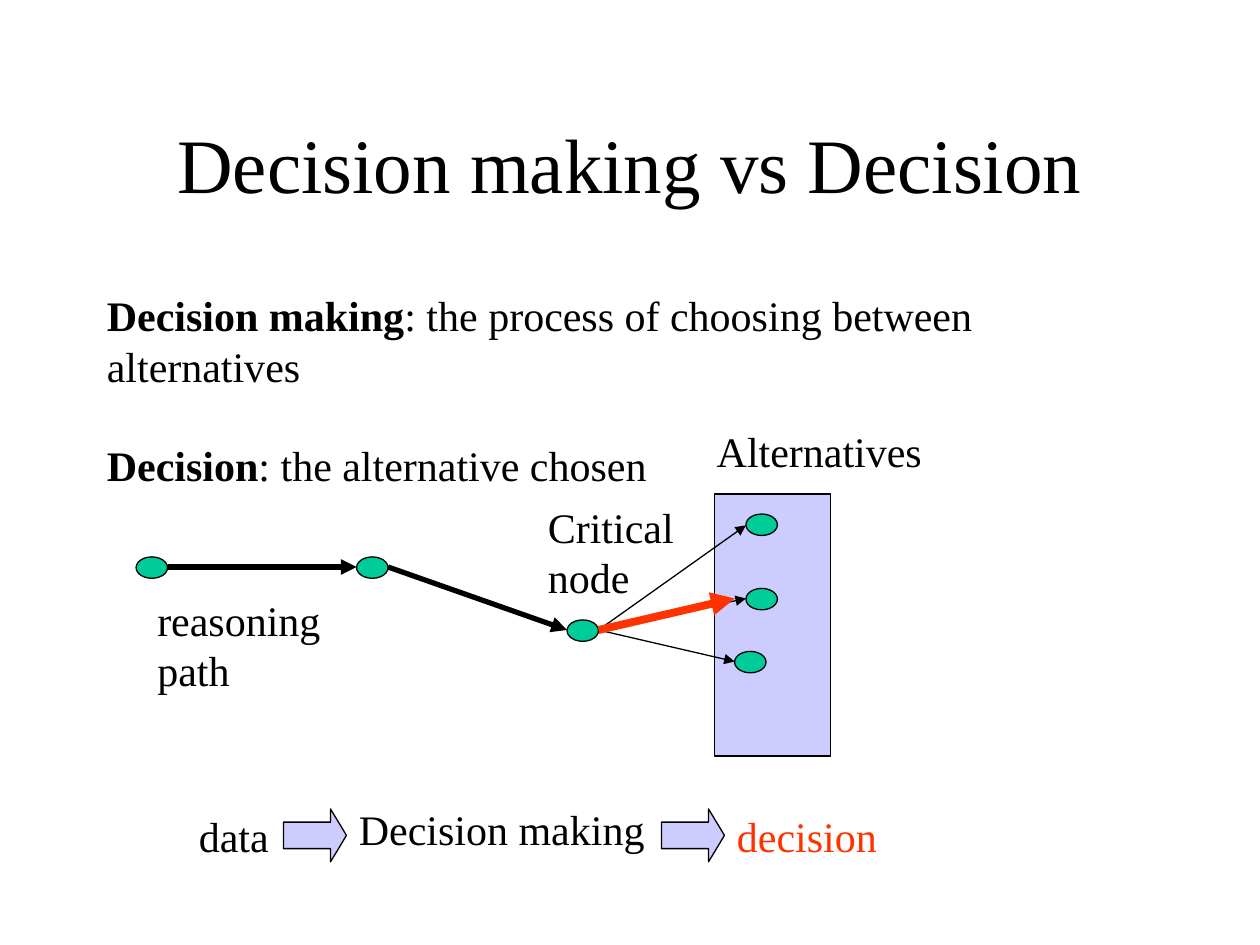
import pptx
import pptx.util
import pptx.dml.color
import pptx.enum.shapes
import pptx.enum.text
import pptx.oxml
import pptx.oxml.ns

Inches = pptx.util.Inches
Pt = pptx.util.Pt
SHAPE = pptx.enum.shapes.MSO_SHAPE
FONT, BLACK, RED, GREEN, LILAC = "Times New Roman", "000000", "FF3300", "00CC99", "CCCCFF"


def color(code):
    return pptx.dml.color.RGBColor.from_string(code)


def style(para, size=24, code=BLACK):
    for run in para.runs:
        run.font.name = FONT
        run.font.size = Pt(size)
        run.font.color.rgb = color(code)


deck = pptx.Presentation()
deck.slide_width, deck.slide_height = Inches(10), Inches(7.5)
slide = deck.slides.add_slide(deck.slide_layouts[5])
shapes = slide.shapes

# Title
title = shapes.title
title.left, title.top = Inches(0.75), Inches(0.67)
title.width, title.height = Inches(8.5), Inches(1.25)
title.text_frame.text = "Decision making vs Decision"
title.text_frame.vertical_anchor = pptx.enum.text.MSO_ANCHOR.MIDDLE
title.text_frame.paragraphs[0].alignment = pptx.enum.text.PP_ALIGN.CENTER
style(title.text_frame.paragraphs[0], 44)

# Definitions
box = shapes.add_textbox(Inches(0.75), Inches(2.25), Inches(8), Inches(1.7))
frame = box.text_frame
frame.word_wrap = True
terms = [
    ("Decision making", ": the process of choosing between alternatives"),
    ("Decision", ": the alternative chosen"),
]
for i, (term, rest) in enumerate(terms):
    para = frame.add_paragraph() if i else frame.paragraphs[0]
    para.space_before = Pt(28 * i)
    para.add_run().text = term
    para.add_run().text = rest
    para.runs[0].font.bold = True
    style(para)

# Panel, nodes and block arrows
solids = [(SHAPE.RECTANGLE, 5.67, 3.92, 0.92, 2.08, LILAC)]
nodes = [(1.08, 4.42), (2.83, 4.42), (4.5, 4.92), (5.92, 4.08), (5.92, 4.67), (5.83, 5.17)]
solids += [(SHAPE.OVAL, x, y, 0.25, 0.17, GREEN) for x, y in nodes]
solids += [(SHAPE.RIGHT_ARROW, x, 6.42, 0.5, 0.42, LILAC) for x in (2.25, 5.25)]
for kind, x, y, w, h, fill in solids:
    solid = shapes.add_shape(kind, Inches(x), Inches(y), Inches(w), Inches(h))
    solid.shadow.inherit = False
    solid.fill.solid()
    solid.fill.fore_color.rgb = color(fill)
    solid.line.color.rgb = color(BLACK)
    solid.line.width = Pt(0.75)
    if kind == SHAPE.RIGHT_ARROW:
        solid.adjustments[1] = 0.3

# Labels
labels = [
    ("Alternatives", 5.59, 3.33, 1.83, 0.5, BLACK),
    ("reasoning\npath", 1.15, 4.67, 1.5, 0.9, BLACK),
    ("Critical\nnode", 4.25, 3.93, 1.2, 0.9, BLACK),
    ("data", 1.48, 6.38, 0.76, 0.5, BLACK),
    ("Decision making", 2.75, 6.33, 2.47, 0.5, BLACK),
    ("decision", 5.75, 6.38, 1.31, 0.5, RED),
]
for text, x, y, w, h, code in labels:
    label = shapes.add_textbox(Inches(x), Inches(y), Inches(w), Inches(h))
    label.text_frame.word_wrap = False
    label.text_frame.text = text
    for para in label.text_frame.paragraphs:
        style(para, code=code)

# Paths between nodes, with the chosen one last
links = [
    (1.33, 4.5, 2.83, 4.5, 3, BLACK),
    (3.08, 4.5, 4.5, 5, 3, BLACK),
    (4.75, 5, 5.92, 4.17, 0.75, BLACK),
    (4.75, 5, 5.92, 4.75, 0.75, BLACK),
    (4.75, 5, 5.83, 5.25, 0.75, BLACK),
    (4.75, 5, 5.83, 4.75, 4.5, RED),
]
for x1, y1, x2, y2, width, code in links:
    link = shapes.add_connector(
        pptx.enum.shapes.MSO_CONNECTOR.STRAIGHT,
        Inches(x1), Inches(y1), Inches(x2), Inches(y2))
    link.line.color.rgb = color(code)
    link.line.width = Pt(width)
    space = pptx.oxml.ns.nsdecls("a")
    head = pptx.oxml.parse_xml(f'<a:tailEnd {space} type="triangle"/>')
    link.line._get_or_add_ln().append(head)
    link._element.spPr.append(pptx.oxml.parse_xml(f"<a:effectLst {space}/>"))

deck.save("out.pptx")
